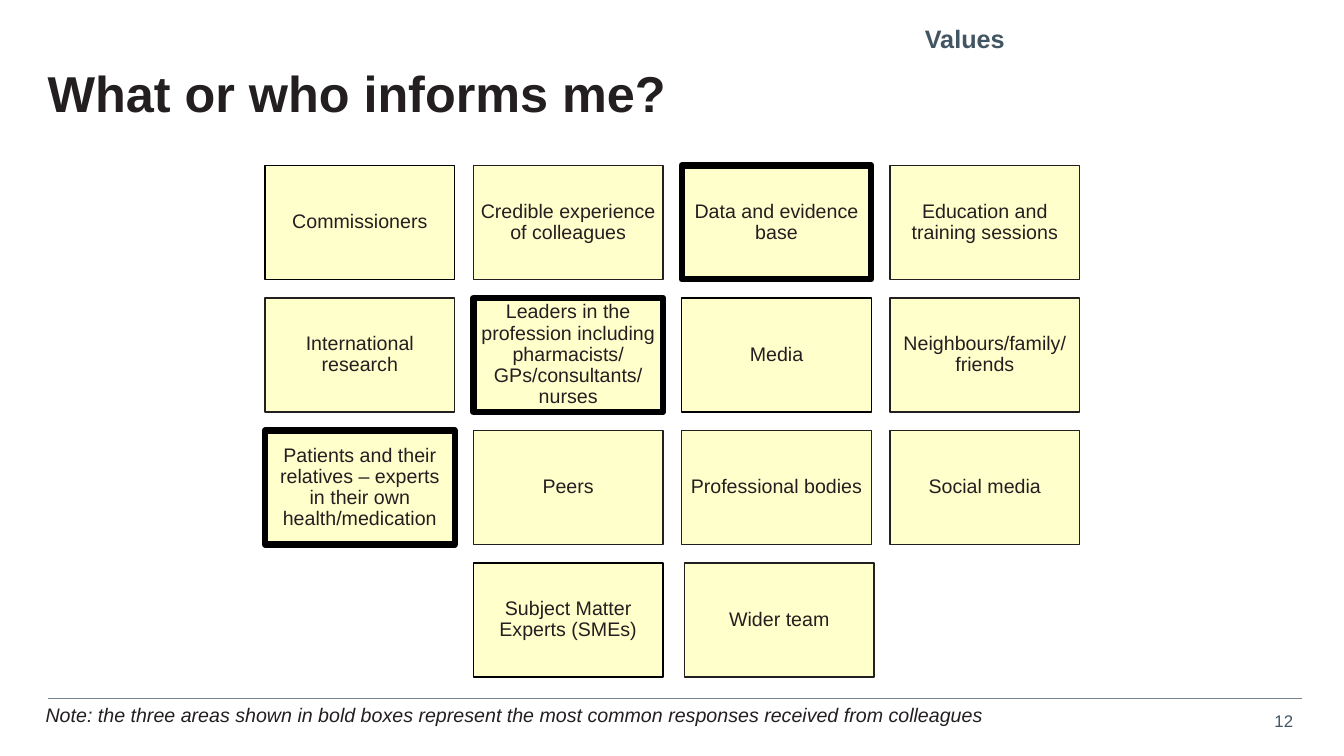
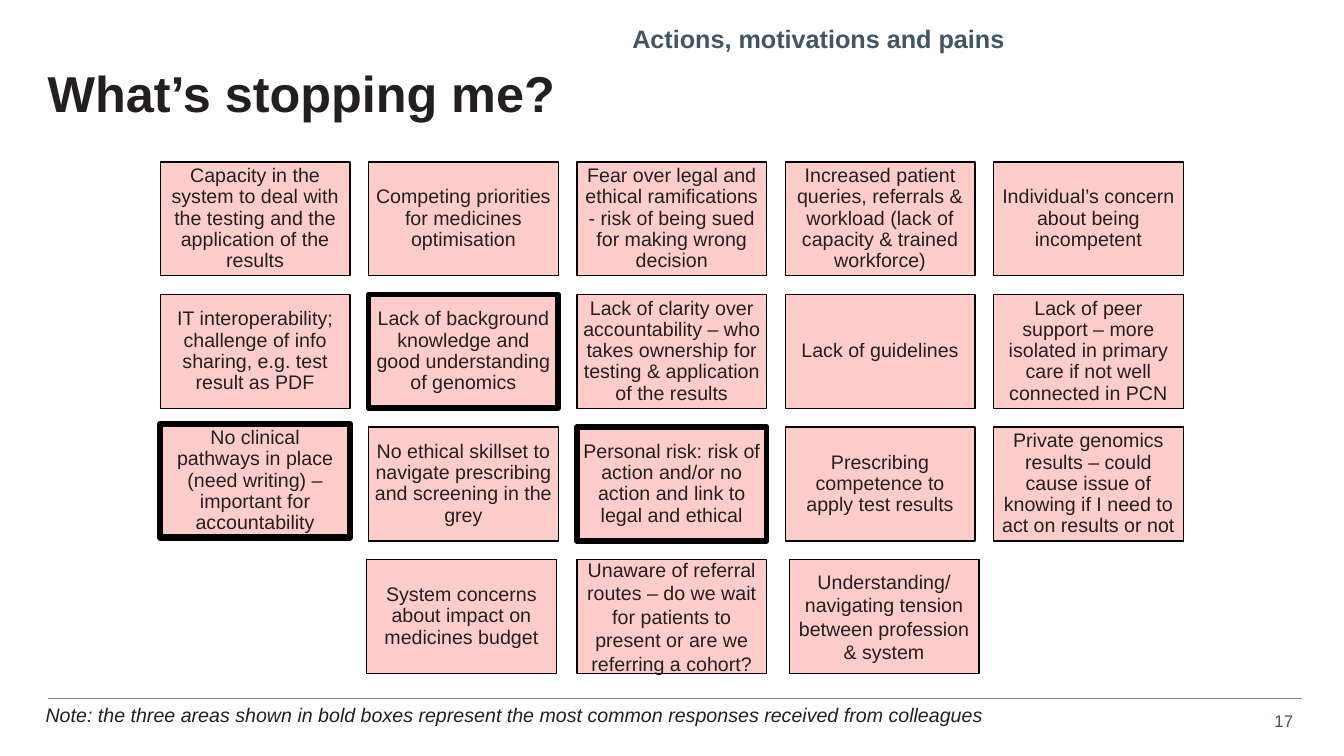
"""Build two workshop slides that show grouped responses as grids of cards."""
from dataclasses import dataclass

import pptx
import pptx.dml.color
import pptx.enum.shapes
import pptx.enum.text
import pptx.oxml.ns
import pptx.presentation
import pptx.slide
import pptx.text.text
import pptx.util
from lxml import etree

Cm = pptx.util.Cm
Pt = pptx.util.Pt
RGBColor = pptx.dml.color.RGBColor
Align = pptx.enum.text.PP_ALIGN
Anchor = pptx.enum.text.MSO_ANCHOR

INK = RGBColor(0x23, 0x1F, 0x20)
BLACK = RGBColor(0x00, 0x00, 0x00)
SLATE = RGBColor(0x42, 0x55, 0x63)
RULE_GREY = RGBColor(0x76, 0x86, 0x92)
YELLOW = RGBColor(0xFF, 0xFF, 0xCC)
PINK = RGBColor(0xFF, 0xCC, 0xCC)

FONT = "Arial"
CARD_WIDTH, CARD_HEIGHT = Cm(4.78), Cm(2.87)
COLUMN_STEP, ROW_STEP = Cm(5.25), Cm(3.34)
CARD_INSET = Cm(0.15)
NOTE = ("Note: the three areas shown in bold boxes represent "
        "the most common responses received from colleagues")


@dataclass(frozen=True)
class Card:
    """One response with its border, line spacing and nudge off the grid."""
    text: str
    border: float = 1
    border_color: RGBColor = BLACK
    line_spacing: float | None = 0.9
    shift_x: float = 0
    shift_y: float = 0


@dataclass(frozen=True)
class CardSlide:
    """The content of one slide; short rows are centred on the columns."""
    number: int
    section: str
    title: str
    fill: RGBColor
    left: float
    top: float
    rows: tuple[tuple[Card, ...], ...]


SLIDES = (
    CardSlide(12, "Values", "What or who informs me?", YELLOW, 6.68, 4.17, (
        (Card("Commissioners"),
         Card("Credible experience of colleagues", border_color=INK),
         Card("Data and evidence base", border=4.5),
         Card("Education and training sessions", border_color=INK)),
        (Card("International research", border_color=INK),
         Card("Leaders in the profession including pharmacists/ GPs/consultants/ nurses",
              border=4.5),
         Card("Media"),
         Card("Neighbours/family/ friends", border_color=INK)),
        (Card("Patients and their relatives – experts in their own health/medication",
              border=4.5),
         Card("Peers", border_color=INK),
         Card("Professional bodies", border_color=INK),
         Card("Social media", border_color=INK)),
        (Card("Subject Matter Experts (SMEs)"),
         Card("Wider team", border_color=INK, shift_x=0.07)),
    )),
    CardSlide(17, "Actions, motivations and pains", "What’s stopping me?", PINK, 4.04, 4.08, (
        (Card("Capacity in the system to deal with the testing and the application "
              "of the results"),
         Card("Competing priorities for medicines optimisation"),
         Card("Fear over legal and ethical ramifications - risk of being sued "
              "for making wrong decision"),
         Card("Increased patient queries, referrals & workload "
              "(lack of capacity & trained workforce)"),
         Card("Individual’s concern about being incompetent")),
        (Card("IT interoperability; challenge of info sharing, e.g. test result as PDF"),
         Card("Lack of background knowledge and good understanding of genomics", border=4),
         Card("Lack of clarity over accountability – who takes ownership for testing "
              "& application of the results"),
         Card("Lack of guidelines"),
         Card("Lack of peer support – more isolated in primary care "
              "if not well connected in PCN")),
        (Card("No clinical pathways in place (need writing) –important for accountability",
              border=4.5, shift_y=-0.08),
         Card("No ethical skillset to navigate prescribing and screening in the grey"),
         Card("Personal risk: risk of action and/or no action and link to legal and ethical",
              border=4),
         Card("Prescribing competence to apply test results"),
         Card("Private genomics results – could cause issue of knowing "
              "if I need to act on results or not")),
        (Card("System concerns about impact on medicines budget", shift_x=-0.05),
         Card("Unaware of referral routes – do we wait for patients to present "
              "or are we referring a cohort?", line_spacing=None),
         Card("Understanding/ navigating tension between profession & system",
              line_spacing=None, shift_x=0.1)),
    )),
)


def write_text(frame: pptx.text.text.TextFrame, text: str, *, size: float,
               color: RGBColor = INK, bold: bool = False, italic: bool = False,
               align: Align = Align.LEFT, anchor: Anchor = Anchor.TOP,
               line_spacing: float | pptx.util.Length | None = None,
               inset: pptx.util.Length | None = None, wrap: bool = True) -> None:
    """Fill a text frame with one formatted paragraph."""
    frame.word_wrap = wrap
    frame.auto_size = pptx.enum.text.MSO_AUTO_SIZE.NONE
    frame.vertical_anchor = anchor
    if inset is not None:
        frame.margin_left = frame.margin_top = inset
        frame.margin_right = frame.margin_bottom = inset
    paragraph = frame.paragraphs[0]
    paragraph.alignment = align
    paragraph.line_spacing = line_spacing
    run = paragraph.add_run()
    run.text = text
    run.font.name = FONT
    run.font.size = Pt(size)
    run.font.bold = bold
    run.font.italic = italic
    run.font.color.rgb = color


def draw_frame(slide: pptx.slide.Slide, content: CardSlide) -> None:
    """Add the title, section name, footer rule, note and slide number."""
    title = slide.shapes.title
    title.left, title.top = Cm(1.2), Cm(1.73)
    title.width, title.height = Cm(31.67), Cm(1.73)
    write_text(title.text_frame, content.title, size=36, bold=True,
               line_spacing=0.9, inset=Cm(0))

    section = slide.shapes.add_textbox(Cm(12.14), Cm(0.58), Cm(13.18), Cm(1.6))
    write_text(section.text_frame, content.section, size=18, color=SLATE, bold=True,
               align=Align.RIGHT, line_spacing=Pt(22), inset=Cm(0))

    rule = slide.shapes.add_connector(pptx.enum.shapes.MSO_CONNECTOR.STRAIGHT,
                                      Cm(1.2), Cm(17.6), Cm(32.8), Cm(17.6))
    rule.line.color.rgb = RULE_GREY
    rule.line.width = Pt(0.5)
    etree.SubElement(rule.element.spPr, pptx.oxml.ns.qn("a:effectLst"))

    note = slide.shapes.add_textbox(Cm(0.9), Cm(17.6), Cm(31.67), Cm(0.86))
    write_text(note.text_frame, NOTE, size=14, italic=True)

    number = slide.shapes.add_textbox(Cm(31.8), Cm(17.78), Cm(1.04), Cm(0.76))
    write_text(number.text_frame, str(content.number), size=12, color=SLATE,
               align=Align.RIGHT, wrap=False)


def draw_card(slide: pptx.slide.Slide, card: Card, fill: RGBColor, left: int, top: int) -> None:
    """Draw one bordered card with centred text."""
    shape = slide.shapes.add_shape(pptx.enum.shapes.MSO_SHAPE.RECTANGLE,
                                   left + Cm(card.shift_x), top + Cm(card.shift_y),
                                   CARD_WIDTH, CARD_HEIGHT)
    shape.shadow.inherit = False
    shape.fill.solid()
    shape.fill.fore_color.rgb = fill
    shape.line.color.rgb = card.border_color
    shape.line.width = Pt(card.border)
    write_text(shape.text_frame, card.text, size=14, align=Align.CENTER,
               anchor=Anchor.MIDDLE, line_spacing=card.line_spacing, inset=CARD_INSET)


def add_card_slide(presentation: pptx.presentation.Presentation, content: CardSlide) -> None:
    """Add one slide with its frame and its grid of cards."""
    title_only = presentation.slide_layouts.get_by_name("Title Only")
    slide = presentation.slides.add_slide(title_only)
    draw_frame(slide, content)
    columns = max(len(row) for row in content.rows)
    for row_index, row in enumerate(content.rows):
        first_column = (columns - len(row)) // 2
        for column, card in enumerate(row, start=first_column):
            draw_card(slide, card, content.fill,
                      Cm(content.left) + column * COLUMN_STEP,
                      Cm(content.top) + row_index * ROW_STEP)


def main() -> None:
    """Build and save the presentation."""
    presentation = pptx.Presentation()
    presentation.slide_width = Cm(33.87)
    presentation.slide_height = Cm(19.05)
    for content in SLIDES:
        add_card_slide(presentation, content)
    presentation.save("out.pptx")


if __name__ == "__main__":
    main()
